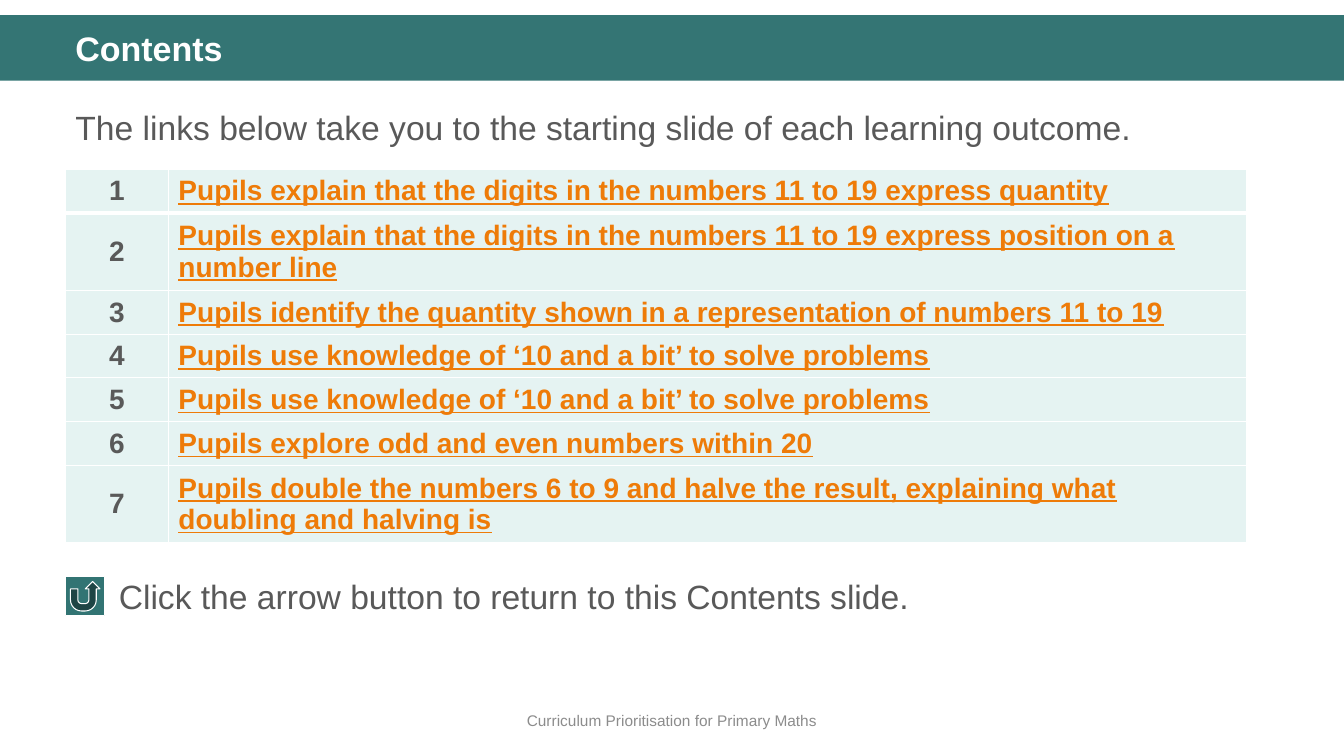
from lxml.etree import SubElement
from pptx import Presentation
from pptx.dml.color import RGBColor
from pptx.enum.shapes import MSO_SHAPE
from pptx.enum.text import MSO_ANCHOR, PP_ALIGN
from pptx.oxml.ns import qn
from pptx.util import Inches, Pt

SLIDE_WIDTH, SLIDE_HEIGHT = Inches(13.33), Inches(7.5)
LEFT_MARGIN, TEXT_WIDTH = 4.88, 91.37
WHITE, GREY, ORANGE = "FFFFFF", "595959", "EE7B08"
OUTCOMES = [
    "Pupils explain that the digits in the numbers 11 to 19 express quantity",
    "Pupils explain that the digits in the numbers 11 to 19 express position on a number line",
    "Pupils identify the quantity shown in a representation of numbers 11 to 19",
    "Pupils use knowledge of ‘10 and a bit’ to solve problems",
    "Pupils use knowledge of ‘10 and a bit’ to solve problems",
    "Pupils explore odd and even numbers within 20",
    "Pupils double the numbers 6 to 9 and halve the result, explaining what doubling and halving is",
]


def color(hex_code):
    return RGBColor.from_string(hex_code)


def across(percent):
    return round(SLIDE_WIDTH * percent / 100)


def down(percent):
    return round(SLIDE_HEIGHT * percent / 100)


def area(left, top, width, height):
    return across(left), down(top), across(width), down(height)


def write(frame, text, size, hex_code, bold=False, underline=False,
          align=PP_ALIGN.LEFT, spacing=None):
    paragraph = frame.paragraphs[0]
    paragraph.text = text
    paragraph.alignment = align
    paragraph.line_spacing = spacing
    font = paragraph.font
    font.name, font.size = "Arial", Pt(size)
    font.bold, font.underline = bold, underline
    font.color.rgb = color(hex_code)


def add_text(slide, place, text, size, hex_code, anchor=MSO_ANCHOR.TOP, **style):
    frame = slide.shapes.add_textbox(*area(*place)).text_frame
    frame.word_wrap = True
    frame.vertical_anchor = anchor
    write(frame, text, size, hex_code, **style)


def add_block(slide, preset, place, fill, outline=None):
    block = slide.shapes.add_shape(preset, *area(*place))
    block.shadow.inherit = False
    block.fill.solid()
    block.fill.fore_color.rgb = color(fill)
    if outline:
        block.line.color.rgb = color(outline)
        block.line.width = Pt(0.75)
    else:
        block.line.fill.background()


def add_borders(cell, top, bottom):
    properties = cell._tc.get_or_add_tcPr()
    for side, points in (("L", 1), ("R", 1), ("T", top), ("B", bottom)):
        border = SubElement(properties, qn(f"a:ln{side}"), w=str(Pt(points)))
        fill = SubElement(border, qn("a:solidFill"))
        SubElement(fill, qn("a:srgbClr"), val=WHITE)


def fill_cell(cell, row, text, hex_code, **style):
    add_borders(cell, top=3 if row == 1 else 1, bottom=3 if row == 0 else 1)
    cell.fill.solid()
    cell.fill.fore_color.rgb = color("E5F3F2")
    cell.vertical_anchor = MSO_ANCHOR.MIDDLE
    write(cell.text_frame, text, 20, hex_code, bold=True, **style)


def add_outcomes(slide, left, top, column_widths, row_height):
    place = area(left, top, sum(column_widths), row_height * len(OUTCOMES))
    table = slide.shapes.add_table(len(OUTCOMES), len(column_widths), *place).table
    table.first_row = table.horz_banding = False
    for column, width in zip(table.columns, column_widths):
        column.width = across(width)
    for row, outcome in enumerate(OUTCOMES):
        table.rows[row].height = down(row_height)
        fill_cell(table.cell(row, 0), row, str(row + 1), GREY, align=PP_ALIGN.CENTER)
        fill_cell(table.cell(row, 1), row, outcome, ORANGE, underline=True)


def main():
    deck = Presentation()
    deck.slide_width, deck.slide_height = SLIDE_WIDTH, SLIDE_HEIGHT
    slide = deck.slides.add_slide(deck.slide_layouts[6])

    add_block(slide, MSO_SHAPE.RECTANGLE, (0, 2, 100, 8.67), "347574")
    add_text(slide, (0, 92.67, 100, 5.33), "Curriculum Prioritisation for Primary Maths",
             11, "8C8C8C", anchor=MSO_ANCHOR.MIDDLE, align=PP_ALIGN.CENTER)
    add_text(slide, (LEFT_MARGIN, 12.4, TEXT_WIDTH, 46.8),
             "The links below take you to the starting slide of each learning outcome.",
             24, GREY, spacing=1.2)
    add_outcomes(slide, LEFT_MARGIN, 22.4, (7.65, 80.2), 5.47)
    add_block(slide, MSO_SHAPE.ACTION_BUTTON_RETURN, (LEFT_MARGIN, 76.27, 2.93, 5.2),
              "327473", outline=WHITE)
    add_text(slide, (8.1, 75.47, 84.92, 6.67),
             "Click the arrow button to return to this Contents slide.", 24, GREY)
    add_text(slide, (LEFT_MARGIN, 3.6, TEXT_WIDTH, 6.27), "Contents", 24.3, WHITE,
             bold=True, spacing=0.9)
    deck.save("out.pptx")


if __name__ == "__main__":
    main()
